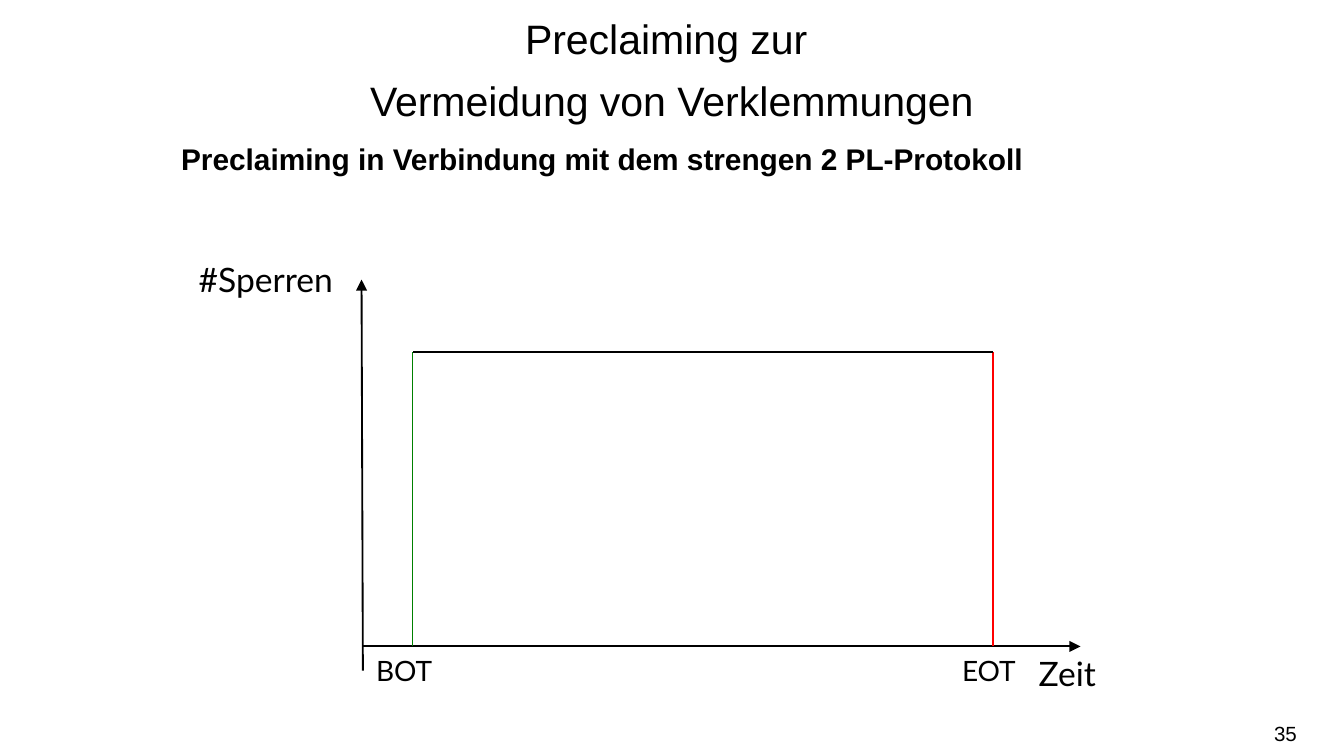
from dataclasses import dataclass

from lxml.etree import SubElement
from pptx import Presentation
from pptx.dml.color import RGBColor as RGB
from pptx.enum.shapes import MSO_CONNECTOR as Connector
from pptx.enum.text import MSO_ANCHOR as Anchor, PP_ALIGN as Align
from pptx.oxml.ns import qn
from pptx.util import Inches, Pt


@dataclass(frozen=True)
class Theme:
    black: RGB = RGB(0x00, 0x00, 0x00)
    green: RGB = RGB(0x00, 0x80, 0x00)
    red: RGB = RGB(0xFF, 0x00, 0x00)
    text_font: str = "Arial"
    label_font: str = "Lato"
    title_size: int = 22
    body_size: int = 16
    axis_size: int = 18
    tick_size: int = 15
    number_size: int = 11
    line_width: int = 1


THEME = Theme()


def add_text(page, text, left, top, width, height, *, size, font=THEME.text_font,
             bold=False, align=Align.LEFT, anchor=Anchor.TOP, spacing=None,
             side_inset=0.1):
    box = page.shapes.add_textbox(Inches(left), Inches(top), Inches(width), Inches(height))
    frame = box.text_frame
    frame.word_wrap = True
    frame.vertical_anchor = anchor
    frame.margin_left = frame.margin_right = Inches(side_inset)
    para = frame.paragraphs[0]
    para.text = text
    para.alignment = align
    para.line_spacing = spacing
    for span in para.runs:
        span.font.name = font
        span.font.size = Pt(size)
        span.font.bold = bold
        span.font.color.rgb = THEME.black


def add_line(page, start, end, color=THEME.black, arrow=False):
    line = page.shapes.add_connector(Connector.STRAIGHT, *map(Inches, start + end))
    line.line.color.rgb = color
    line.line.width = Pt(THEME.line_width)
    if arrow:
        SubElement(line.line._get_or_add_ln(), qn("a:tailEnd"), type="triangle")
    SubElement(line._element.spPr, qn("a:effectLst"))


def add_lock_diagram(page):
    """Locks held over time: all acquired at BOT, all released at EOT."""
    origin, base, level = 2.7, 4.81, 2.62
    begin, finish = 3.07, 7.39

    add_line(page, (origin, 4.99), (2.69, 2.08), arrow=True)
    add_line(page, (origin, base), (8.04, base), arrow=True)
    add_line(page, (begin, base), (begin, level), THEME.green)
    add_line(page, (finish, level), (finish, base), THEME.red)
    add_line(page, (finish, level), (begin, level))

    labels = [
        ("#Sperren", 1.38, 1.88, 1.31, 0.4, THEME.axis_size),
        ("Zeit", 7.63, base, 0.82, 0.4, THEME.axis_size),
        ("BOT", origin, base, 0.73, 0.35, THEME.tick_size),
        ("EOT", 7.06, base, 0.66, 0.35, THEME.tick_size),
    ]
    for text, left, top, width, height, size in labels:
        add_text(page, text, left, top, width, height, size=size, font=THEME.label_font)


def main():
    deck = Presentation()
    deck.slide_width = Inches(10)
    deck.slide_height = Inches(10) * 9 // 16
    page = deck.slides.add_slide(deck.slide_layouts[6])

    add_text(page, "Preclaiming zur \vVermeidung von Verklemmungen", 0, 0, 10, 0.94,
             size=THEME.title_size, align=Align.CENTER, anchor=Anchor.MIDDLE, spacing=1.25)
    add_text(page, "Preclaiming in Verbindung mit dem strengen 2 PL-Protokoll",
             1.25, 1, 7.5, 0.75, size=THEME.body_size, bold=True)
    add_lock_diagram(page)
    add_text(page, "35", 7.41, 5.31, 2.24, 0.3, size=THEME.number_size,
             align=Align.RIGHT, anchor=Anchor.MIDDLE, side_inset=0)

    deck.save("out.pptx")


if __name__ == "__main__":
    main()
